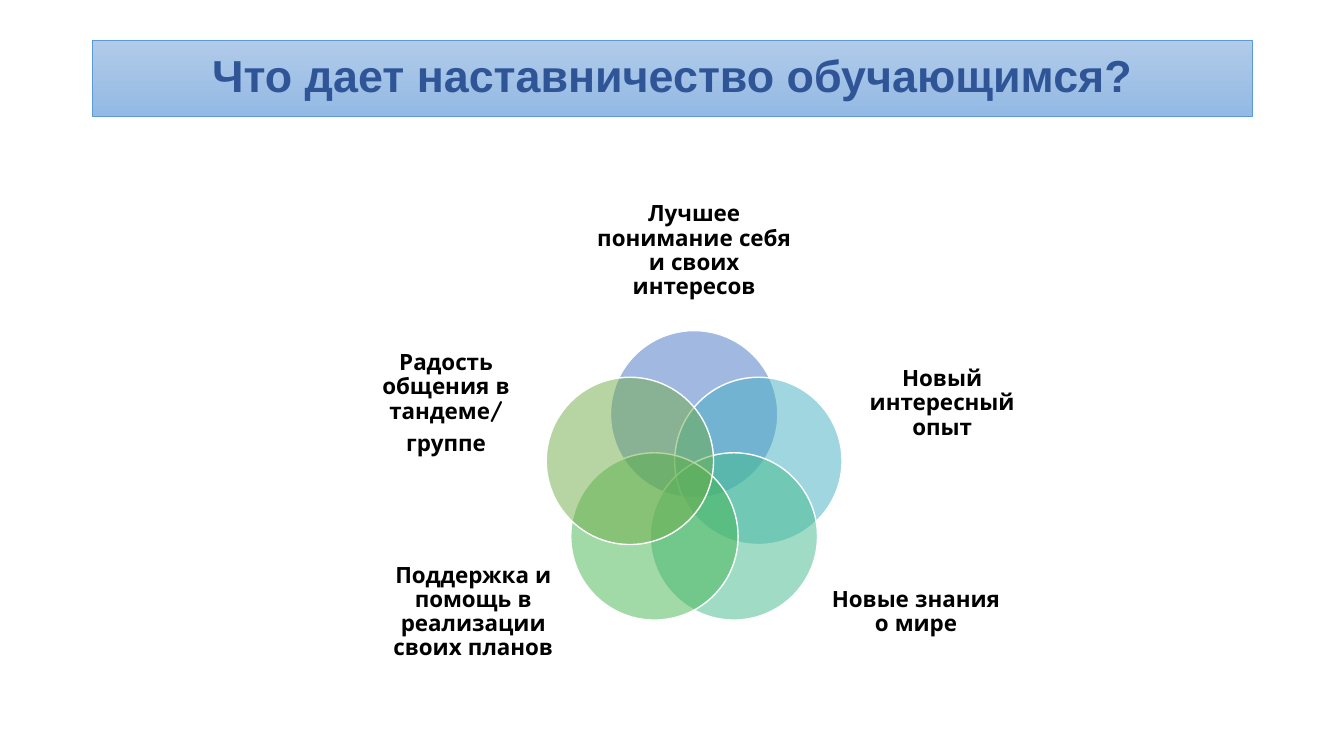
from math import cos, sin, radians
from lxml import etree
from pptx import Presentation
from pptx.dml.color import RGBColor as Rgb
from pptx.enum.shapes import MSO_SHAPE as Shape
from pptx.enum.text import MSO_ANCHOR as Anchor, PP_ALIGN as Align
from pptx.oxml.ns import qn
from pptx.util import Inches, Pt

COLORS = {
    "text": "000000", "title": "2F5597", "edge": "5B9BD5",
    "light": "B1CBE9", "dark": "93B9E4", "rim": "FFFFFF",
    "blue": "4472C4", "cyan": "43AFC0", "teal": "43BB8D",
    "green": "45B451", "olive": "70AD47",
}
# Petals clockwise from the top: colour, label box within the diagram, lines
PETALS = [
    ("blue", (2.36, 0, 1.93, 1.12), ["Лучшее понимание себя и своих интересов"]),
    ("cyan", (4.92, 1.47, 1.73, 1.21), ["Новый интересный опыт"]),
    ("teal", (4.66, 3.54, 1.73, 1.21), ["Новые знания о мире"]),
    ("green", (0.27, 3.54, 1.73, 1.21),
     ["Поддержка и помощь в реализации своих планов"]),
    ("olive", (0, 1.47, 1.73, 1.21), ["Радость общения в тандеме/", "группе"]),
]


def color(name):
    return Rgb.from_string(COLORS[name])


def write(frame, lines, font, size, tint, after=0):
    """Fill a text frame with bold centred paragraphs."""
    frame.word_wrap = True
    frame.vertical_anchor = Anchor.MIDDLE
    for i, line in enumerate(lines):
        para = frame.add_paragraph() if i else frame.paragraphs[0]
        para.alignment = Align.CENTER
        para.line_spacing = 0.9
        para.space_after = Pt(after)
        run = para.add_run()
        run.text = line
        run.font.name = font
        run.font.size = Pt(size)
        run.font.bold = True
        run.font.color.rgb = color(tint)


def add_title(slide, box, text):
    bar = slide.shapes.add_shape(Shape.RECTANGLE, *map(Inches, box))
    bar.shadow.inherit = False
    bar.fill.gradient()
    bar.fill.gradient_angle = 270
    for stop, name in zip(bar.fill.gradient_stops, ("light", "dark")):
        stop.color.rgb = color(name)
    bar.line.color.rgb = color("edge")
    bar.line.width = Pt(0.5)
    write(bar.text_frame, [text], "Arial", 32, "title")


def add_disc(slide, x, y, size, name):
    """Draw a half-transparent circle centred on x, y."""
    disc = slide.shapes.add_shape(
        Shape.OVAL, Inches(x - size / 2), Inches(y - size / 2),
        Inches(size), Inches(size))
    disc.shadow.inherit = False
    disc.fill.solid()
    disc.fill.fore_color.rgb = color(name)
    tint = disc.fill._xPr.find(qn("a:solidFill"))[0]
    etree.SubElement(tint, qn("a:alpha")).set("val", "50000")
    disc.line.color.rgb = color("rim")
    disc.line.width = Pt(1)


def add_label(slide, box, lines):
    frame = slide.shapes.add_textbox(*map(Inches, box)).text_frame
    frame.margin_left = frame.margin_right = 0
    frame.margin_top = frame.margin_bottom = 0
    write(frame, lines, "Quicksand", 16, "text", 5.6)


def add_venn(slide, box):
    """Set overlapping discs on a ring, each with its label."""
    left, top, width, height = box
    mid_x, mid_y = left + width / 2, top + height * 0.6
    ring, size = 0.67, 1.66
    for i, (name, (x, y, w, h), lines) in enumerate(PETALS):
        turn = radians(360 / len(PETALS) * i)
        add_disc(slide, mid_x + ring * sin(turn), mid_y - ring * cos(turn),
                 size, name)
        add_label(slide, (left + x, top + y, w, h), lines)


def main():
    deck = Presentation()
    deck.slide_width, deck.slide_height = Inches(13.33), Inches(7.5)
    slide = deck.slides.add_slide(deck.slide_layouts[6])
    add_venn(slide, (3.56, 1.93, 6.65, 4.75))
    add_title(slide, (0.92, 0.4, 11.5, 0.75),
              "Что дает наставничество обучающимся?")
    deck.save("out.pptx")


if __name__ == "__main__":
    main()
